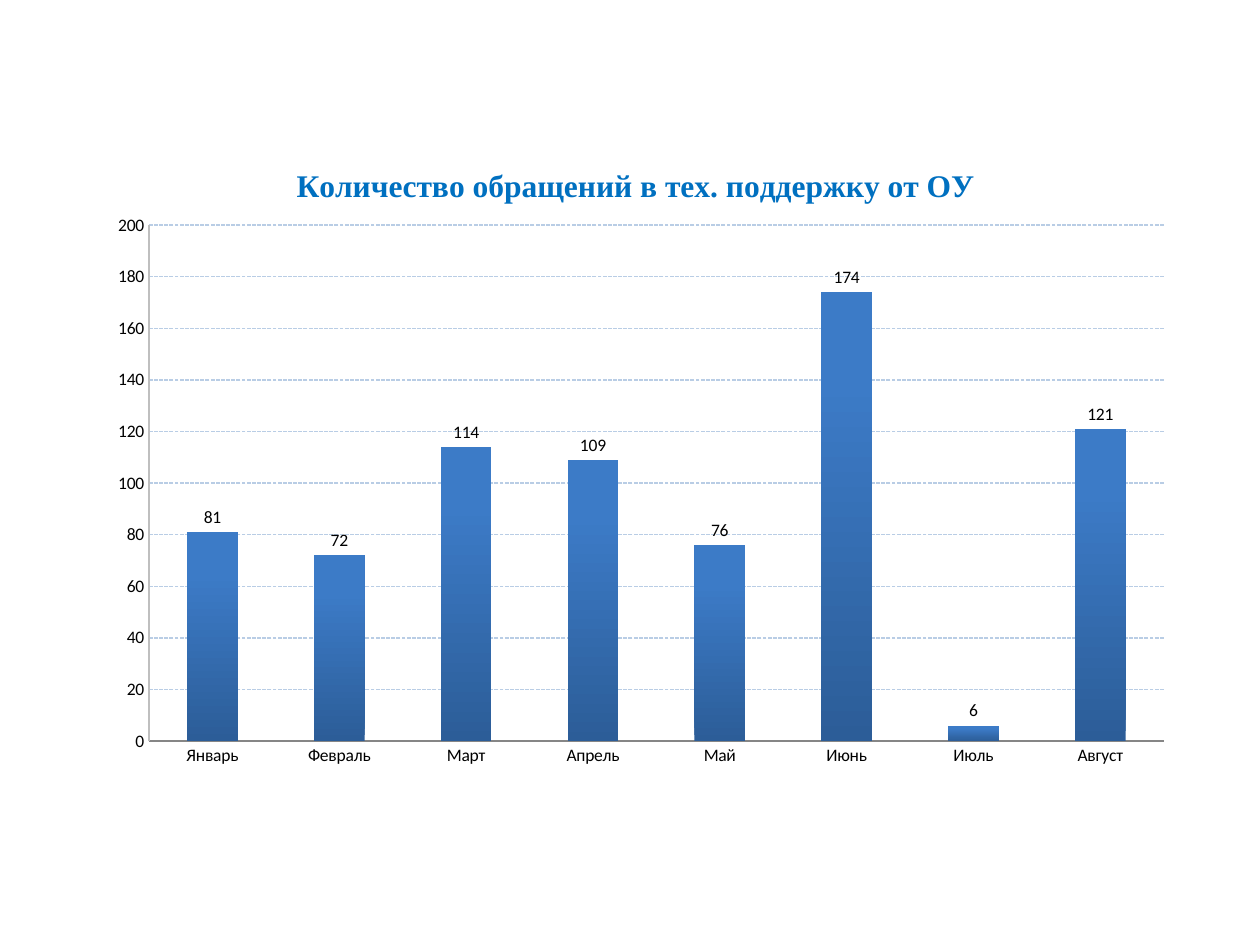
from typing import NamedTuple

from lxml import etree
from pptx import Presentation
from pptx.chart.chart import Chart
from pptx.chart.data import CategoryChartData
from pptx.dml.color import RGBColor
from pptx.enum import chart as ch, dml
from pptx.oxml.ns import qn
from pptx.util import Inches, Pt

COLORS = {
    "title": "0070C0",
    "text": "000000",
    "bar_top": "3C7BC7",
    "bar_bottom": "2C5D98",
    "grid": "B9CDE5",
    "value_axis": "BFBFBF",
    "category_axis": "868686",
}


class Month(NamedTuple):
    name: str
    requests: int


MONTHS = [
    Month("Январь", 81),
    Month("Февраль", 72),
    Month("Март", 114),
    Month("Апрель", 109),
    Month("Май", 76),
    Month("Июнь", 174),
    Month("Июль", 6),
    Month("Август", 121),
]


def rgb(name: str) -> RGBColor:
    return RGBColor.from_string(COLORS[name])


def style_line(line, color: str) -> None:
    line.color.rgb = rgb(color)
    line.width = Pt(0.75)


def set_layout(parent, **places) -> None:
    layout = parent.find(qn("c:layout"))
    if layout is None:
        layout = etree.Element(qn("c:layout"))
        parent.insert(0, layout)
    manual = etree.SubElement(layout, qn("c:manualLayout"))
    for tag, value in places.items():
        etree.SubElement(manual, qn(f"c:{tag}")).set("val", str(value))


def add_title(chart: Chart, title: str) -> None:
    chart.has_title = True
    r = chart.chart_title.text_frame.paragraphs[0].add_run()
    r.text = title
    r.font.name = "Times New Roman"
    r.font.size = Pt(18)
    r.font.bold = True
    r.font.color.rgb = rgb("title")
    set_layout(chart.chart_title._element, xMode="edge", yMode="edge", x=0.18, y=0.04)


def style_axes(chart: Chart) -> None:
    for axis, color in (
        (chart.category_axis, "category_axis"),
        (chart.value_axis, "value_axis"),
    ):
        axis.major_tick_mark = ch.XL_TICK_MARK.NONE
        axis.minor_tick_mark = ch.XL_TICK_MARK.NONE
        style_line(axis.format.line, color)
    axis = chart.value_axis
    axis.minimum_scale, axis.maximum_scale, axis.major_unit = 0, 200, 20
    axis.has_major_gridlines = True
    grid = axis.major_gridlines.format.line
    style_line(grid, "grid")
    grid.dash_style = dml.MSO_LINE.SQUARE_DOT


def style_bars(chart: Chart) -> None:
    plot = chart.plots[0]
    plot.gap_width = 150
    plot.vary_by_categories = False
    plot.has_data_labels = True
    plot.data_labels.show_value = True
    plot.data_labels.position = ch.XL_LABEL_POSITION.OUTSIDE_END
    fill = plot.series[0].format.fill
    fill.gradient()
    fill.gradient_angle = 90
    bottom, top = fill.gradient_stops
    bottom.position, bottom.color.rgb = 0, rgb("bar_bottom")
    top.position, top.color.rgb = 0.8, rgb("bar_top")


def main() -> None:
    """Build the slide with the monthly support request chart."""
    prs = Presentation()
    prs.slide_width, prs.slide_height = Inches(10), Inches(7.5)
    s = prs.slides.add_slide(prs.slide_layouts[6])
    data = CategoryChartData()
    data.categories = [m.name for m in MONTHS]
    data.add_series("Series 1", [m.requests for m in MONTHS])
    chart = s.shapes.add_chart(
        ch.XL_CHART_TYPE.COLUMN_CLUSTERED,
        Inches(0.75), Inches(1.07), Inches(8.66), Inches(5.12), data,
    ).chart
    chart.has_legend = False
    chart.font.name = "Calibri"
    chart.font.size = Pt(10)
    chart.font.color.rgb = rgb("text")
    add_title(chart, "Количество обращений в тех. поддержку от ОУ")
    style_axes(chart)
    style_bars(chart)
    plot_area = chart._chartSpace.find(f".//{qn('c:plotArea')}")
    set_layout(plot_area, layoutTarget="inner", xMode="edge", yMode="edge",
               x=0.05, y=0.14, w=0.93, h=0.8)
    prs.save("out.pptx")


if __name__ == "__main__":
    main()
